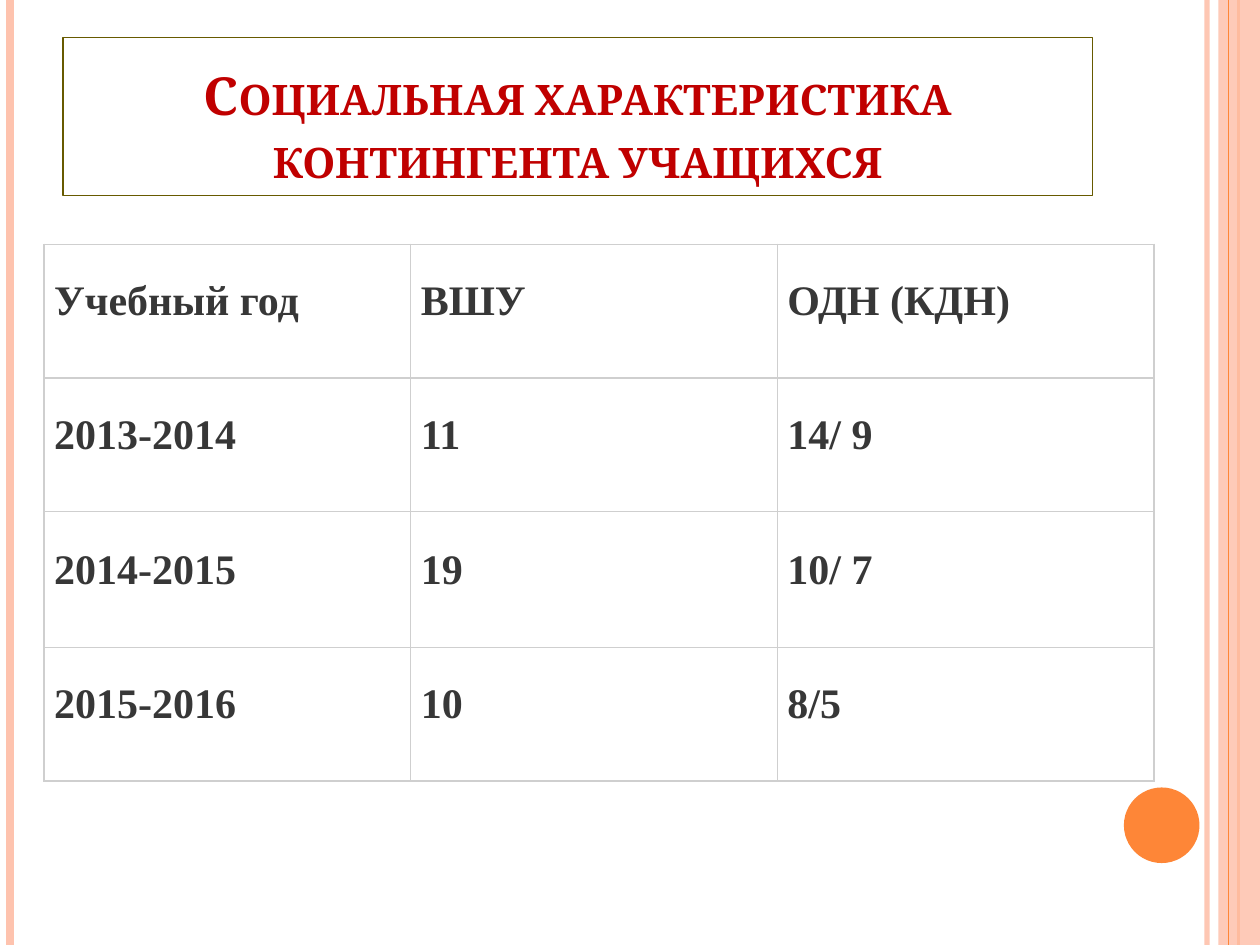
import pptx
import pptx.util
import pptx.dml.color
import pptx.enum.shapes
import pptx.enum.text
import pptx.oxml
import pptx.oxml.ns
from dataclasses import dataclass

Inches = pptx.util.Inches
Pt = pptx.util.Pt
Shape = pptx.enum.shapes.MSO_SHAPE
Anchor = pptx.enum.text.MSO_ANCHOR
qn = pptx.oxml.ns.qn
NS = pptx.oxml.ns.nsdecls("a")

COLORS = {
    "peach": "FEC3AE",
    "orange": "FE8637",
    "frame": "675A00",
    "title": "C00000",
    "text": "373737",
    "grid": "CFCFCF",
    "white": "FFFFFF",
}


@dataclass
class Stripe:
    x: float
    color: str
    width: float
    alpha: int = 100


BACK = [
    Stripe(9.58, "peach", 3, 93),
    Stripe(0.08, "peach", 4.5),
    Stripe(9.83, "orange", 1.5),
]
FRONT = Stripe(9.75, "orange", 0.75)

ROWS = [
    ("Учебный год", "ВШУ", "ОДН (КДН)"),
    ("2013-2014", "11", "14/ 9"),
    ("2014-2015", "19", "10/ 7"),
    ("2015-2016", "10", "8/5"),
]
WIDTHS = (2.91, 2.91, 2.99)
HEIGHTS = (1.06, 1.06, 1.08, 1.06)


def rgb(name: str) -> pptx.dml.color.RGBColor:
    return pptx.dml.color.RGBColor.from_string(COLORS[name])


def fade(part, alpha: int) -> None:
    """Set the opacity, in percent, of the colour inside an element."""
    if alpha < 100:
        tint = part.find(".//" + qn("a:srgbClr"))
        tint.append(pptx.oxml.parse_xml(f'<a:alpha {NS} val="{alpha * 1000}"/>'))


def draw_stripe(slide, stripe: Stripe) -> None:
    x = Inches(stripe.x)
    line = slide.shapes.add_connector(
        pptx.enum.shapes.MSO_CONNECTOR.STRAIGHT, x, 0, x, Inches(7.5))
    line.line.color.rgb = rgb(stripe.color)
    line.line.width = Pt(stripe.width)
    props = line._element.spPr
    fade(props, stripe.alpha)
    props.append(pptx.oxml.parse_xml(f"<a:effectLst {NS}/>"))


def draw_shape(slide, kind, box: tuple, fill: str = "", alpha: int = 100):
    shape = slide.shapes.add_shape(kind, *map(Inches, box))
    shape.shadow.inherit = False
    shape.line.fill.background()
    if fill:
        shape.fill.solid()
        shape.fill.fore_color.rgb = rgb(fill)
        fade(shape._element.spPr, alpha)
    else:
        shape.fill.background()
    return shape


def style_run(run, face: str, size: float, color: str) -> None:
    run.font.name = face
    run.font.size = Pt(size)
    run.font.bold = True
    run.font.color.rgb = rgb(color)


def draw_title(slide) -> None:
    box = draw_shape(slide, Shape.RECTANGLE, (0.5, 0.3, 8.17, 1.25))
    box.line.color.rgb = rgb("frame")
    box.line.width = Pt(0.75)
    frame = box.text_frame
    frame.text = "Социальная характеристика контингента учащихся"
    frame.word_wrap = True
    frame.vertical_anchor = Anchor.BOTTOM
    para = frame.paragraphs[0]
    para.alignment = pptx.enum.text.PP_ALIGN.CENTER
    run = para.runs[0]
    style_run(run, "Cambria", 30, "title")
    run._r.get_or_add_rPr().set("cap", "small")


def style_cell(cell, text: str) -> None:
    cell.text = text
    cell.vertical_anchor = Anchor.MIDDLE
    cell.margin_left = cell.margin_right = Inches(0.08)
    cell.margin_top = cell.margin_bottom = Inches(0.08)
    para = cell.text_frame.paragraphs[0]
    para.line_spacing = Pt(15.6)
    style_run(para.runs[0], "Times New Roman", 24, "text")
    props = cell._tc.get_or_add_tcPr()
    for side in "LRTB":
        props.append(pptx.oxml.parse_xml(
            f'<a:ln{side} {NS} w="{Pt(1)}"><a:solidFill>'
            f'<a:srgbClr val="{COLORS["grid"]}"/></a:solidFill></a:ln{side}>'))
    cell.fill.solid()
    cell.fill.fore_color.rgb = rgb("white")


def draw_table(slide) -> None:
    table = slide.shapes.add_table(
        len(ROWS), len(WIDTHS), Inches(0.35), Inches(1.94),
        Inches(sum(WIDTHS)), Inches(sum(HEIGHTS))).table
    table.first_row = table.horz_banding = False
    for col, width in zip(table.columns, WIDTHS):
        col.width = Inches(width)
    for row, height, texts in zip(table.rows, HEIGHTS, ROWS):
        row.height = Inches(height)
        for cell, text in zip(row.cells, texts):
            style_cell(cell, text)


def main() -> None:
    deck = pptx.Presentation()
    deck.slide_width, deck.slide_height = Inches(10), Inches(7.5)
    slide = deck.slides.add_slide(deck.slide_layouts[6])

    # Side stripes, band and dot
    for stripe in BACK:
        draw_stripe(slide, stripe)
    draw_shape(slide, Shape.RECTANGLE, (9.67, 0, 0.33, 7.5), "peach", 87)
    draw_stripe(slide, FRONT)
    draw_shape(slide, Shape.OVAL, (8.92, 6.25, 0.6, 0.6), "orange")

    # Title and table
    draw_title(slide)
    draw_table(slide)
    deck.save("out.pptx")


if __name__ == "__main__":
    main()
